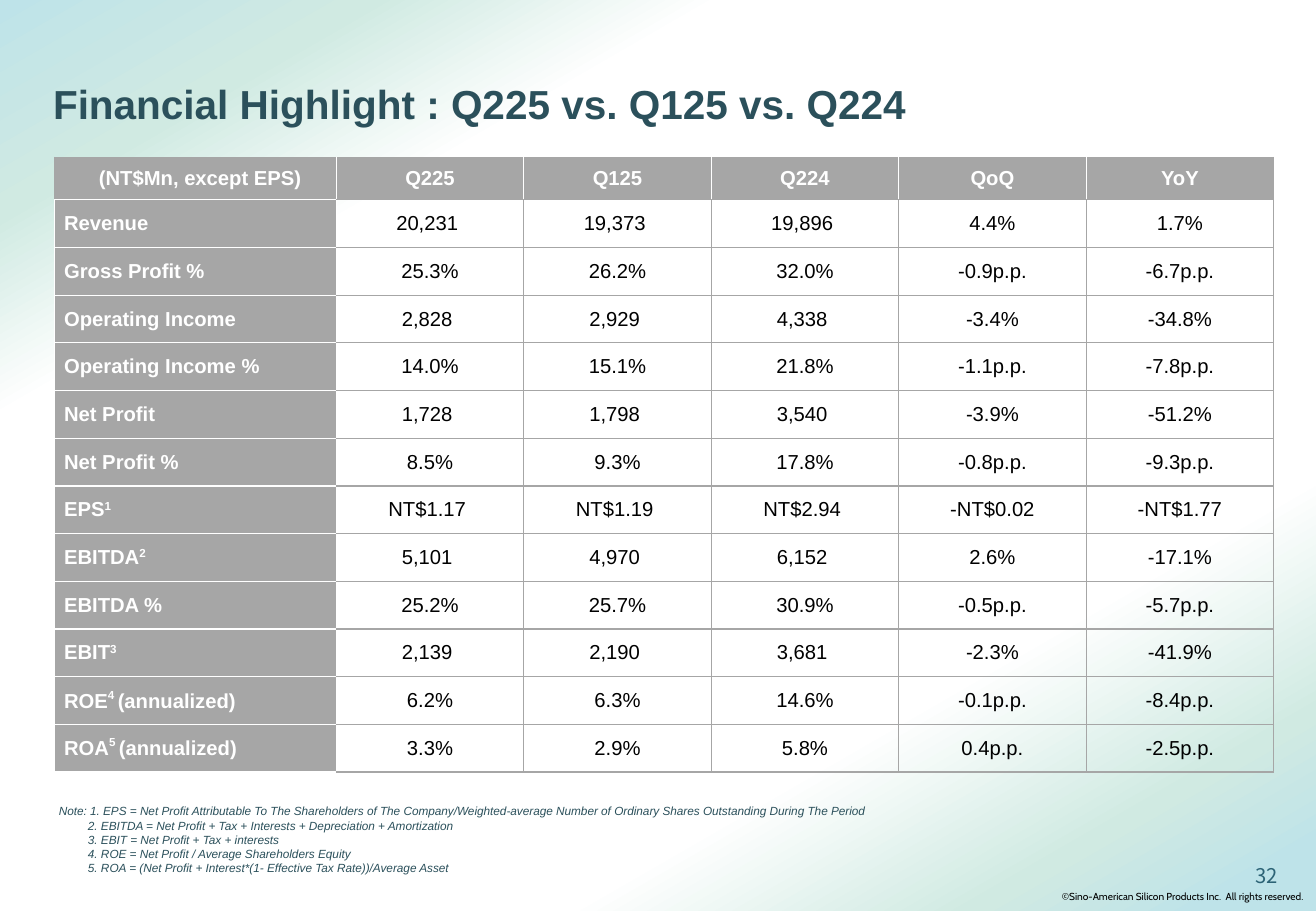
from lxml import etree
from pptx import Presentation
from pptx.dml.color import RGBColor
from pptx.enum.shapes import MSO_SHAPE
from pptx.enum.text import MSO_ANCHOR, PP_ALIGN
from pptx.oxml import parse_xml
from pptx.oxml.ns import qn
from pptx.util import Cm, Pt

RECT = MSO_SHAPE.RECTANGLE
TOP, MIDDLE = MSO_ANCHOR.TOP, MSO_ANCHOR.MIDDLE
LEFT, CENTER = PP_ALIGN.LEFT, PP_ALIGN.CENTER

WHITE = RGBColor(0xFF, 0xFF, 0xFF)
BLACK = RGBColor(0, 0, 0)
GREY = RGBColor(0xA6, 0xA6, 0xA6)
TEAL = RGBColor(0x2B, 0x50, 0x5B)
PAGE_TEAL = RGBColor(0x2C, 0x63, 0x76)
SKY = RGBColor(0xBE, 0xE3, 0xE9)
MINT = RGBColor(0xD0, 0xEA, 0xE2)

STOPS = [(0, SKY), (13, MINT), (25, WHITE), (74, WHITE), (88, MINT), (96, SKY)]
A_NS = "http://schemas.openxmlformats.org/drawingml/2006/main"

ROWS = [
    ["(NT$Mn, except EPS)", "Q225", "Q125", "Q224", "QoQ", "YoY"],
    ["Revenue", "20,231 ", "19,373 ", "19,896 ", "4.4%", "1.7%"],
    ["Gross Profit %", "25.3%", "26.2%", "32.0%", "-0.9p.p.", "-6.7p.p."],
    ["Operating Income", "2,828 ", "2,929 ", "4,338 ", "-3.4%", "-34.8%"],
    ["Operating Income %", "14.0%", "15.1%", "21.8%", "-1.1p.p.", "-7.8p.p."],
    ["Net Profit", "1,728 ", "1,798 ", "3,540 ", "-3.9%", "-51.2%"],
    ["Net Profit %", "8.5%", "9.3%", "17.8%", "-0.8p.p.", "-9.3p.p."],
    ["EPS|1", "NT$1.17 ", "NT$1.19 ", "NT$2.94 ", " -NT$0.02 ", "-NT$1.77"],
    ["EBITDA|2", "5,101 ", "4,970 ", "6,152 ", "2.6%", "-17.1%"],
    ["EBITDA %", "25.2%", "25.7%", "30.9%", "-0.5p.p.", "-5.7p.p."],
    ["EBIT|3", "2,139 ", "2,190 ", "3,681 ", "-2.3%", "-41.9%"],
    ["ROE|4 |(annualized)", "6.2%", "6.3%", "14.6%", "-0.1p.p.", "-8.4p.p."],
    ["ROA|5 |(annualized)", "3.3%", "2.9%", "5.8%", "0.4p.p.", "-2.5p.p."],
]

NOTES = [
    "Note: 1. EPS = Net Profit Attributable To The Shareholders of The Company/"
    "Weighted-average Number of Ordinary Shares Outstanding During The Period",
    "2. EBITDA = Net Profit + Tax + Interests + Depreciation + Amortization",
    "3. EBIT = Net Profit + Tax + interests",
    "4. ROE = Net Profit / Average Shareholders Equity",
    "5. ROA = (Net Profit + Interest*(1- Effective Tax Rate))/Average Asset",
]


def write(p, text, size, color, font="Arial", bold=False, italic=False,
          align=LEFT, spacing=None, raised=34000):
    p.alignment = align
    if spacing:
        p.line_spacing = spacing
    for i, part in enumerate(text.split("|")):
        r = p.add_run()
        r.text = part
        f = r.font
        f.name, f.size, f.bold, f.italic = font, Pt(size), bold, italic
        f.color.rgb = color
        rPr = r._r.get_or_add_rPr()
        etree.SubElement(rPr, qn("a:ea")).set("typeface", font)
        if i % 2:
            rPr.set("baseline", str(raised))


def add_text(s, box, lines, anchor=TOP, right=0.25, indent=0, **fmt):
    tf = s.shapes.add_textbox(*map(Cm, box)).text_frame
    tf.word_wrap = True
    tf.vertical_anchor = anchor
    tf.margin_right = Cm(right)
    for i, line in enumerate(lines):
        p = tf.add_paragraph() if i else tf.paragraphs[0]
        if i and indent:
            p._p.get_or_add_pPr().set("marL", str(Cm(indent)))
        write(p, line, **fmt)


def add_backdrop(s, box):
    sp = s.shapes.add_shape(RECT, *map(Cm, box))
    sp.shadow.inherit = False
    sp.line.fill.background()
    stops = "".join(
        f'<a:gs pos="{pos * 1000}"><a:srgbClr val="{color}"/></a:gs>'
        for pos, color in STOPS)
    grad = parse_xml(
        f'<a:gradFill xmlns:a="{A_NS}" rotWithShape="1"><a:gsLst>{stops}</a:gsLst>'
        '<a:lin ang="3600000" scaled="0"/></a:gradFill>')
    sp._element.spPr.find(qn("a:prstGeom")).addnext(grad)


def set_borders(cell, left, right, top, bottom):
    tcPr = cell._tc.get_or_add_tcPr()
    for side, color in zip("LRTB", (left, right, top, bottom)):
        tcPr.append(parse_xml(
            f'<a:ln{side} xmlns:a="{A_NS}" w="9525"><a:solidFill>'
            f'<a:srgbClr val="{color}"/></a:solidFill></a:ln{side}>'))


def add_highlights(s, box, label_w=5.89, header_h=0.89):
    x, y, w, h = box
    n_rows, n_cols = len(ROWS), len(ROWS[0])
    table = s.shapes.add_table(n_rows, n_cols, *map(Cm, box)).table
    for c, col in enumerate(table.columns):
        col.width = Cm((w - label_w) / (n_cols - 1) if c else label_w)
    for r, row in enumerate(table.rows):
        row.height = Cm((h - header_h) / (n_rows - 1) if r else header_h)
        for c, text in enumerate(ROWS[r]):
            cell = table.cell(r, c)
            header, label = r == 0, c == 0
            set_borders(
                cell,
                left=WHITE if c == 1 or header != label else GREY,
                right=WHITE if label or header and c < n_cols - 1 else GREY,
                top=WHITE if label and not header else GREY,
                bottom=WHITE if label else GREY)
            if header or label:
                cell.fill.solid()
                cell.fill.fore_color.rgb = GREY
            else:
                cell.fill.background()
            cell.vertical_anchor = MIDDLE
            cell.margin_left = Cm(0.2 if label else 0)
            cell.margin_right = cell.margin_top = cell.margin_bottom = 0
            write(cell.text_frame.paragraphs[0], text, 12,
                  WHITE if header or label else BLACK, bold=header or label,
                  align=LEFT if label and not header else CENTER,
                  raised=45000 if text.count("|") == 2 else 34000)


def add_footer(s, box):
    x, y, w, h = box
    add_text(s, (x + w - 5.56, y + 0.43, 5.56, 0.58),
             ["©Sino-American Silicon Products Inc.  All rights reserved."],
             right=0, size=6, color=BLACK, font="Cabin", spacing=1.5)
    add_text(s, (x + w - 1.52, y, 1.52, 1.1), ["32"],
             size=12, color=PAGE_TEAL, font="Noto Sans CJK SC")


def main():
    prs = Presentation()
    prs.slide_width, prs.slide_height = Cm(27.51), Cm(19.05)
    s = prs.slides.add_slide(prs.slide_layouts[6])
    add_backdrop(s, (0, 0, 27.51, 19.05))
    add_text(s, (0.86, 1.14, 24, 2.16),
             ["Financial Highlight : Q225 vs. Q125 vs. Q224"], anchor=MIDDLE,
             size=24, color=TEAL, bold=True, spacing=0.9)
    add_highlights(s, (1.14, 3.29, 25.49, 12.86))
    add_text(s, (0.98, 16.69, 18.2, 1.75), NOTES, indent=0.61,
             size=7, color=TEAL, italic=True)
    add_footer(s, (0, 17.93, 27.51, 1.1))
    prs.save("out.pptx")


if __name__ == "__main__":
    main()
